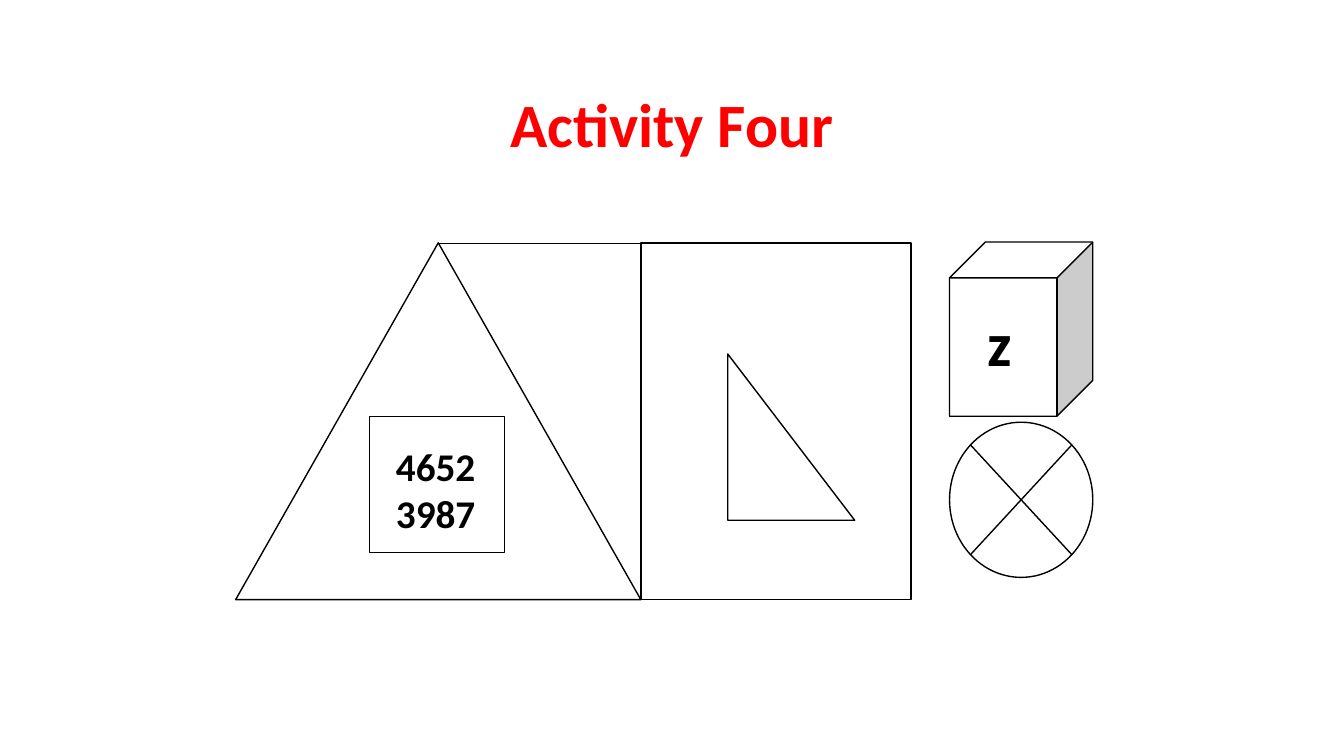
"""Build the Activity Four slide of shapes, digits and a letter."""
from lxml.etree import SubElement
from pptx import Presentation
from pptx.dml.color import RGBColor
from pptx.enum.shapes import MSO_CONNECTOR as Link, MSO_SHAPE as Kind
from pptx.enum.text import MSO_ANCHOR as Anchor, MSO_AUTO_SIZE as Fit, PP_ALIGN as Align
from pptx.oxml.ns import qn
from pptx.util import Cm, Pt


def paint(color, code):
    color.rgb = RGBColor.from_string(code)


def write(frame, text, size, code):
    frame.word_wrap = True
    para = frame.paragraphs[0]
    run = para.add_run()
    run.text = text
    look = {"name": "Calibri", "size": Pt(size), "bold": True}
    for key, value in look.items():
        setattr(run.font, key, value)
    paint(run.font.color, code)
    return para


deck = Presentation()
deck.slide_width, deck.slide_height = Cm(33.87), Cm(19.05)
slide = deck.slides.add_slide(deck.slide_layouts[5])
shapes = slide.shapes

title = shapes.title
place = {"left": Cm(1.7), "top": Cm(0.99), "width": Cm(30.48), "height": Cm(3.18)}
for key, value in place.items():
    setattr(title, key, value)
title.text_frame.vertical_anchor = Anchor.BOTTOM
head = write(title.text_frame, "Activity Four", 44, "FF0000")
head.alignment = Align.CENTER
head.line_spacing = 0.9

left, top, base, tall = 5.94, 6.12, 10.21, 8.99
edge = left + base
figures = [
    (Kind.CUBE, 23.93, 6.1, 3.61, 4.39),
    (Kind.FLOWCHART_SUMMING_JUNCTION, 23.93, 10.64, 3.61, 3.91),
    (Kind.ISOSCELES_TRIANGLE, left, top, base, tall),
    (Kind.RECTANGLE, edge, top, 6.81, tall),
    (Kind.RIGHT_TRIANGLE, 18.34, 8.92, 3.2, 4.19),
    (Kind.RECTANGLE, 9.32, 10.49, 3.4, 3.43),
]
for kind, *box in figures:
    shape = shapes.add_shape(kind, *map(Cm, box))
    shape.shadow.inherit = False
    shape.fill.solid()
    paint(shape.fill.fore_color, "FFFFFF")
    paint(shape.line.color, "000000")
    shape.line.width = Pt(1)

ends = map(Cm, (left + base / 2, top, edge, top))
link = shapes.add_connector(Link.STRAIGHT, *ends)
paint(link.line.color, "000000")
link.line.width = Pt(0.5)
SubElement(link._element.spPr, qn("a:effectLst"))

labels = [
    ("z", 44, 24.64, 7.57, 2.21, 2.13),
    ("46523987", 28, 9.73, 11.02, 2.59, 2.64),
]
for text, size, *box in labels:
    frame = shapes.add_textbox(*map(Cm, box)).text_frame
    write(frame, text, size, "000000")
    frame.auto_size = Fit.SHAPE_TO_FIT_TEXT

deck.save("out.pptx")
